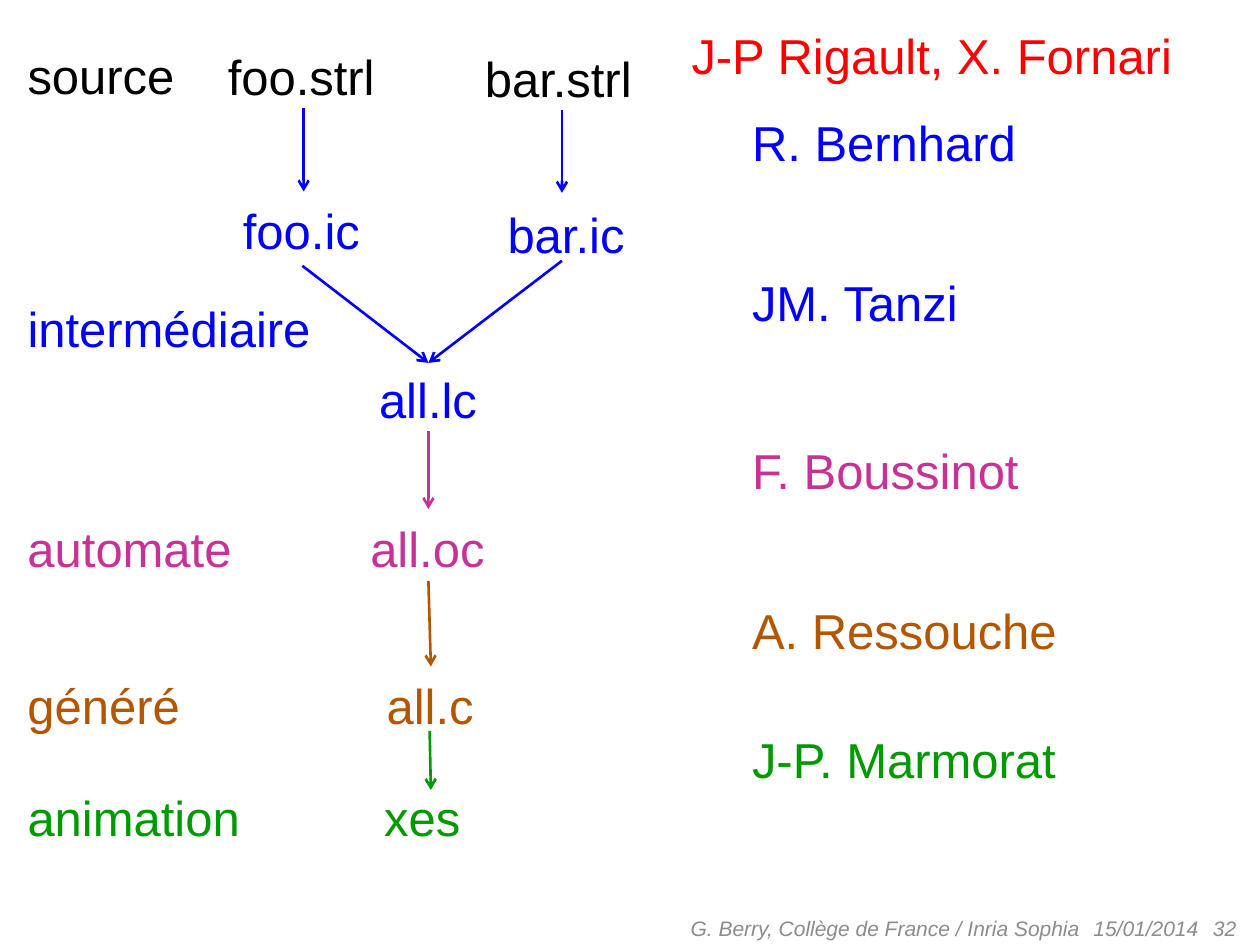
from lxml import etree
from pptx import Presentation
from pptx.dml.color import RGBColor
from pptx.enum import shapes, text
from pptx.oxml import ns
from pptx.util import Inches, Pt

BLACK, BLUE, PINK = "000000", "0000FF", "C83296"
BROWN, GREEN, RED, GREY = "B45600", "009A00", "FF0000", "8C8C8C"


def color(value):
    return RGBColor.from_string(value)


def add_text(wording, left, top, width, height, size, fill):
    box = page.shapes.add_textbox(Inches(left), Inches(top), Inches(width), Inches(height))
    box.text_frame.text = wording
    para = box.text_frame.paragraphs[0]
    font = para.runs[0].font
    font.name, font.size = "Arial", Pt(size)
    font.color.rgb = color(fill)
    return box.text_frame, para


deck = Presentation()
deck.slide_width, deck.slide_height = Inches(10), Inches(7.5)
page = deck.slides.add_slide(deck.slide_layouts[6])

stages = [
    ("source", 0.29, 1.38, BLACK),
    ("intermédiaire", 2.3, 2.48, BLUE),
    ("automate", 4.04, 1.84, PINK),
    ("généré", 5.29, 1.43, BROWN),
    ("animation", 6.18, 1.91, GREEN),
]
authors = [
    ("R. Bernhard", 0.82, 2.41, BLUE),
    ("JM. Tanzi", 2.09, 1.91, BLUE),
    ("F. Boussinot", 3.42, 2.39, PINK),
    ("A. Ressouche", 4.69, 2.65, BROWN),
    ("J-P. Marmorat", 5.72, 2.69, GREEN),
]
labels = [
    ("foo.strl", 1.71, 0.3, 1.38, BLACK),
    ("bar.strl", 3.75, 0.31, 1.4, BLACK),
    ("foo.ic", 1.83, 1.52, 1.14, BLUE),
    ("bar.ic", 3.93, 1.55, 1.16, BLUE),
    ("all.lc", 2.91, 2.86, 0.99, BLUE),
    ("all.oc", 2.84, 4.04, 1.12, PINK),
    ("all.c", 2.97, 5.29, 0.9, BROWN),
    ("xes", 2.95, 6.18, 0.81, GREEN),
    ("J-P Rigault, X. Fornari", 5.39, 0.13, 4.07, RED),
]
for left, column in ((0.12, stages), (5.87, authors)):
    labels += [(wording, left, top, width, fill) for wording, top, width, fill in column]

for wording, left, top, width, fill in labels:
    frame, para = add_text(wording, left, top, width, 0.56, 28, fill)
    frame.word_wrap = False
    frame.auto_size = text.MSO_AUTO_SIZE.SHAPE_TO_FIT_TEXT
    para.line_spacing = 1.05
    para.space_before = Pt(6)

arrows = [
    (2.41, 0.86, 2.41, 1.52, BLUE),
    (4.46, 0.87, 4.46, 1.53, BLUE),
    (2.4, 2.11, 3.4, 2.88, BLUE),
    (4.46, 2.07, 3.4, 2.88, BLUE),
    (3.4, 3.42, 3.4, 4.04, PINK),
    (3.4, 4.61, 3.42, 5.29, BROWN),
    (3.41, 5.8, 3.42, 6.27, GREEN),
]
for *ends, fill in arrows:
    arrow = page.shapes.add_connector(shapes.MSO_CONNECTOR.STRAIGHT, *map(Inches, ends))
    arrow.line.color.rgb = color(fill)
    arrow.line.width = Pt(1.5)
    etree.SubElement(arrow.line._get_or_add_ln(), ns.qn("a:tailEnd"), type="arrow")
    etree.SubElement(arrow._element.spPr, ns.qn("a:effectLst"))

footers = [
    ("G. Berry, Collège de France / Inria Sophia", 5.08, 3.59, text.PP_ALIGN.RIGHT),
    ("15/01/2014", 8.58, 2.33, text.PP_ALIGN.LEFT),
    ("32", 7.58, 2.33, text.PP_ALIGN.RIGHT),
]
for wording, left, width, align in footers:
    frame, para = add_text(wording, left, 7.17, width, 0.4, 12, GREY)
    frame.word_wrap = True
    frame.vertical_anchor = text.MSO_ANCHOR.MIDDLE
    para.alignment = align
    para.runs[0].font.italic = True

deck.save("out.pptx")
